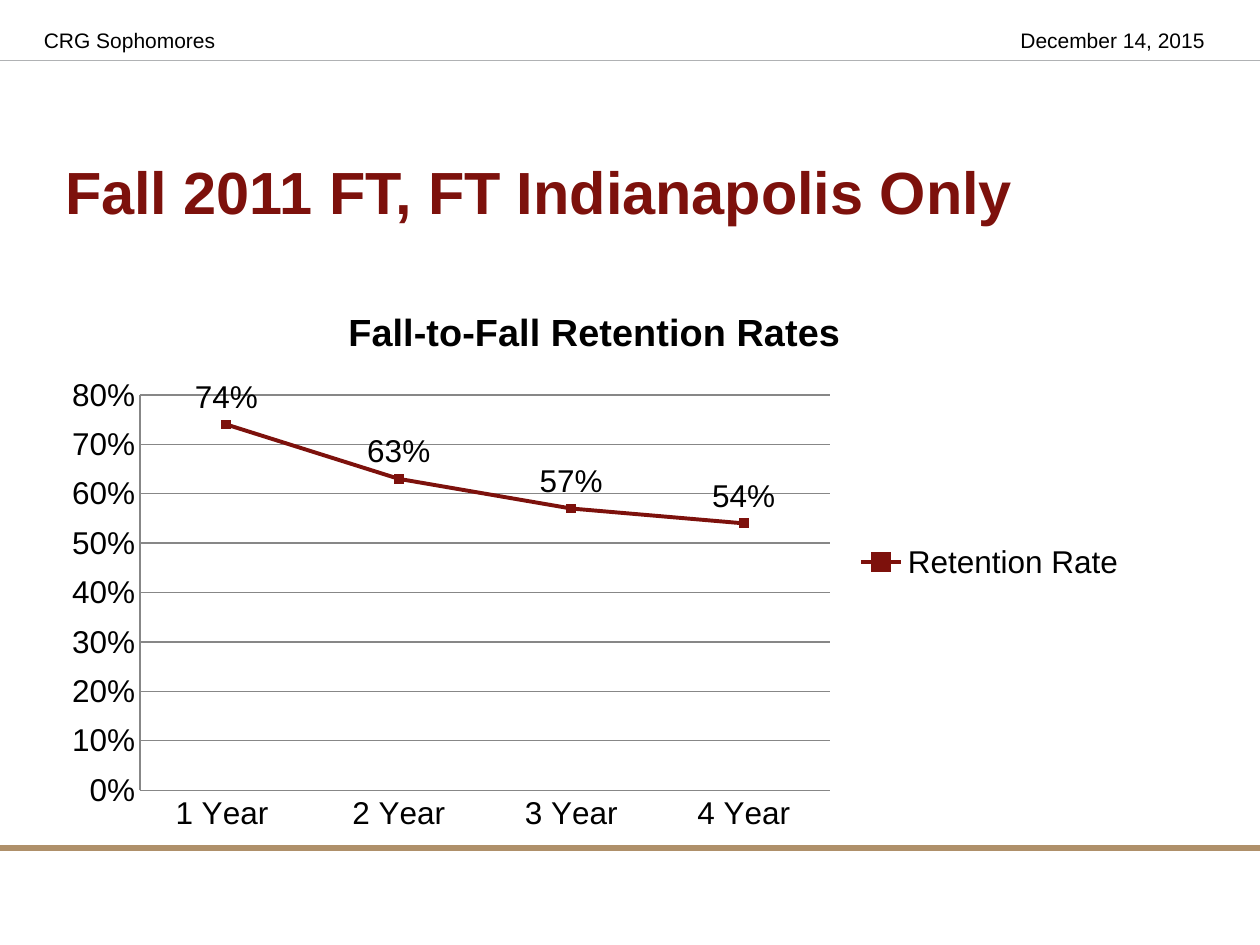
import pptx
import pptx.chart.data
import pptx.dml.color
import pptx.enum.chart
import pptx.enum.shapes
import pptx.enum.text
import pptx.oxml
import pptx.oxml.ns
import pptx.util
import lxml.etree

COLORS = {"maroon": "7D110C", "tan": "AF906A", "rule": "B0B2B4",
          "grid": "878787", "text": "000000"}

prs = pptx.Presentation()
prs.slide_width = pptx.util.Inches(10)
prs.slide_height = pptx.util.Inches(7.5)
COL, ROW = prs.slide_width / 24, prs.slide_height / 18
s = prs.slides.add_slide(prs.slide_layouts[5])


def set_font(font, size, color="text", bold=False):
    fmt = {"name": "Arial", "size": pptx.util.Pt(size), "bold": bold}
    for key, value in fmt.items():
        setattr(font, key, value)
    font.color.rgb = pptx.dml.color.RGBColor.from_string(COLORS[color])


def set_line(line, width, color):
    line.width = pptx.util.Pt(width)
    line.color.rgb = pptx.dml.color.RGBColor.from_string(COLORS[color])


# Header and footer rules across the slide
for row, color, width in [(1.15, "rule", 0.75), (16.15, "tan", 3.75)]:
    y = int(row * ROW)
    sp = s.shapes.add_connector(pptx.enum.shapes.MSO_CONNECTOR.STRAIGHT,
                                0, y, prs.slide_width, y)
    set_line(sp.line, width, color)
    lxml.etree.SubElement(sp._element.spPr, pptx.oxml.ns.qn("a:effectLst"))

# Title
sp = s.shapes.title
box = {"left": COL, "top": 2.14 * ROW, "width": 21.67 * COL, "height": 3 * ROW}
for key, value in box.items():
    setattr(sp, key, int(value))
tf = sp.text_frame
tf.text = "Fall 2011 FT, FT Indianapolis Only"
tf.vertical_anchor = pptx.enum.text.MSO_ANCHOR.MIDDLE
p = tf.paragraphs[0]
p.alignment = pptx.enum.text.PP_ALIGN.LEFT
set_font(p.runs[0].font, 34, "maroon", True)

# Retention chart
data = pptx.chart.data.CategoryChartData(number_format="0%")
data.categories = ["1 Year ", "2 Year", "3 Year", "4 Year"]
data.add_series("Retention Rate ", [0.74, 0.63, 0.57, 0.54])
chart = s.shapes.add_chart(
    pptx.enum.chart.XL_CHART_TYPE.LINE_MARKERS, int(COL), int(5.4 * ROW),
    int(20.86 * COL), int(10.61 * ROW), data).chart
set_font(chart.font, 18)
chart.has_title = True
p = chart.chart_title.text_frame.paragraphs[0]
r = p.add_run()
r.text = "Fall-to-Fall Retention Rates "
set_font(r.font, 21.6, "text", True)
chart.has_legend = True
chart.legend.position = pptx.enum.chart.XL_LEGEND_POSITION.RIGHT
chart.legend.include_in_layout = False

# Axes and gridlines
for axis in (chart.category_axis, chart.value_axis):
    axis.major_tick_mark = pptx.enum.chart.XL_TICK_MARK.NONE
    set_line(axis.format.line, 0.75, "grid")
axis = chart.value_axis
scale = {"minimum_scale": 0, "maximum_scale": 0.8, "major_unit": 0.1,
         "has_major_gridlines": True}
for key, value in scale.items():
    setattr(axis, key, value)
set_line(axis.major_gridlines.format.line, 0.75, "grid")

# Series line, square markers and labels above
plot = chart.plots[0]
plot.vary_by_categories = False
series = plot.series[0]
series.smooth = False
set_line(series.format.line, 2.25, "maroon")
series.marker.style = pptx.enum.chart.XL_MARKER_STYLE.SQUARE
series.marker.size = 5
series.marker.format.fill.solid()
series.marker.format.fill.fore_color.rgb = pptx.dml.color.RGBColor.from_string(COLORS["maroon"])
set_line(series.marker.format.line, 0.75, "maroon")
labels = series.data_labels
label_format = {"show_value": True, "number_format": "0%",
                "number_format_is_linked": False,
                "position": pptx.enum.chart.XL_LABEL_POSITION.ABOVE}
for key, value in label_format.items():
    setattr(labels, key, value)
set_font(labels.font, 18)
for axis in (chart.category_axis, chart.value_axis):
    set_font(axis.tick_labels.font, 18)
chart.value_axis.tick_labels.number_format = "0%"
chart.value_axis.tick_labels.number_format_is_linked = False

# Plot area as shares of the chart
area = chart._chartSpace.chart.plotArea
for old in area.findall(pptx.oxml.ns.qn("c:layout")):
    area.remove(old)
layout = [("layoutTarget", "inner"), ("xMode", "edge"), ("yMode", "edge"),
          ("x", 0.08), ("y", 0.2), ("w", 0.63), ("h", 0.71)]
parts = "".join(f'<c:{tag} val="{value}"/>' for tag, value in layout)
area.insert(0, pptx.oxml.parse_xml(
    f'<c:layout {pptx.oxml.ns.nsdecls("c")}><c:manualLayout>{parts}</c:manualLayout></c:layout>'))

# Header texts
for text, col, cols in [("December 14, 2015", 19.2, 4.2), ("CRG Sophomores", 0.6, 13)]:
    sp = s.shapes.add_textbox(int(col * COL), int(0.4 * ROW), int(cols * COL), int(0.8 * ROW))
    tf = sp.text_frame
    tf.word_wrap = True
    tf.text = text
    set_font(tf.paragraphs[0].runs[0].font, 12)

prs.save("out.pptx")
